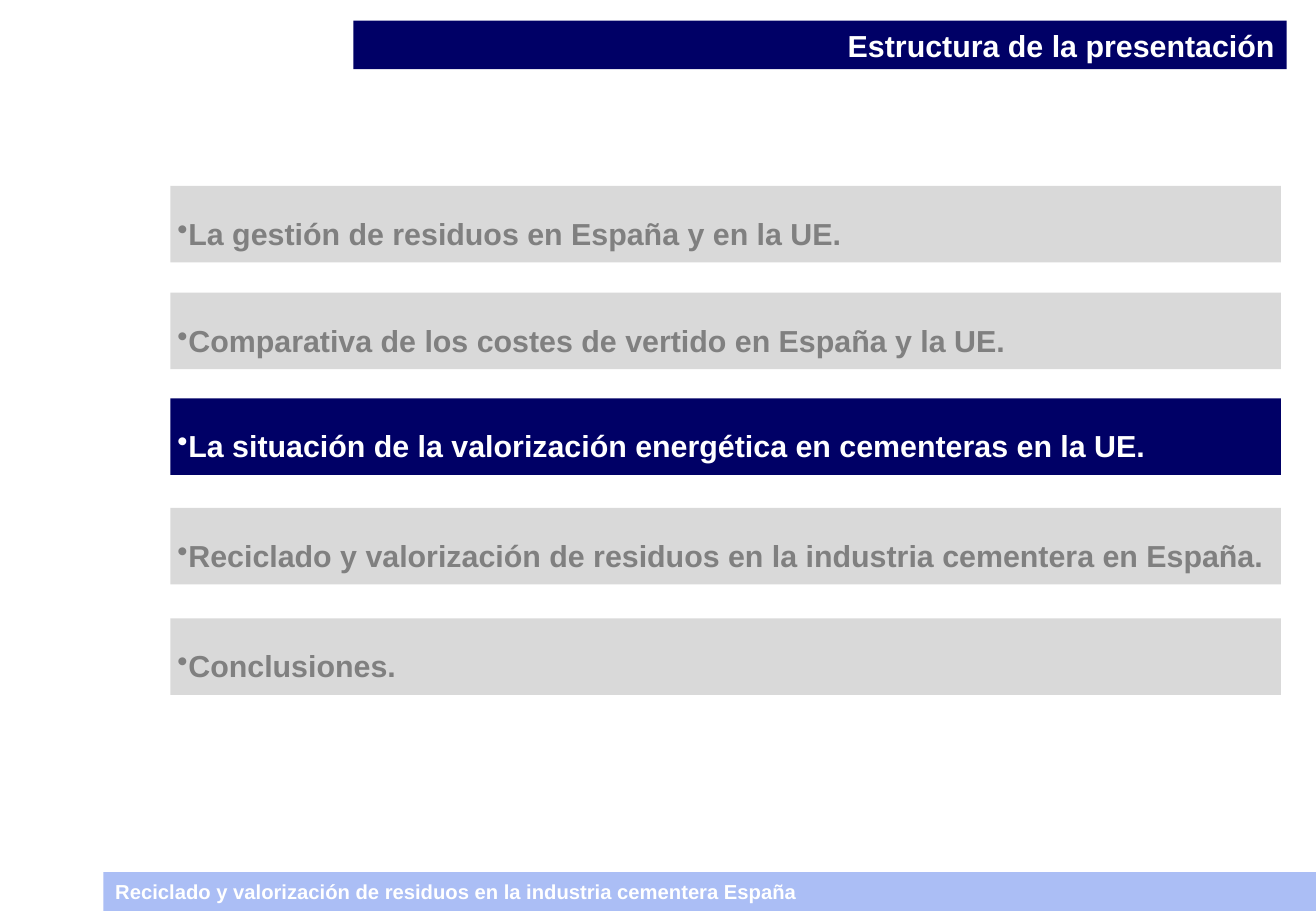
from dataclasses import dataclass

from lxml import etree
from pptx import Presentation
from pptx.dml.color import RGBColor
from pptx.enum.shapes import MSO_SHAPE
from pptx.enum.text import MSO_ANCHOR, PP_ALIGN
from pptx.oxml.ns import qn
from pptx.slide import Slide
from pptx.util import Cm, Pt

RECT = MSO_SHAPE.RECTANGLE
TOP, MIDDLE = MSO_ANCHOR.TOP, MSO_ANCHOR.MIDDLE
LEFT, RIGHT, JUSTIFY = PP_ALIGN.LEFT, PP_ALIGN.RIGHT, PP_ALIGN.JUSTIFY

COLORS = {
    "navy": "000066",
    "sky": "ABBEF5",
    "pale": "D9D9D9",
    "gray": "808080",
    "white": "FFFFFF",
}
FONT = "Arial"
INDENT = Cm(0.23)
ACTIVE = 2
TOPICS = [
    (3.89, "La gestión de residuos en España y en la UE."),
    (6.12, "Comparativa de los costes de vertido en España y la UE."),
    (8.33, "La situación de la valorización energética en cementeras en la UE."),
    (10.62, "Reciclado y valorización de residuos en la industria cementera en España."),
    (12.93, "Conclusiones."),
]


@dataclass
class Bar:
    """A filled band with one line of text; lengths in centimetres."""
    text: str
    left: float
    top: float
    width: float
    height: float
    fill: str
    color: str = "white"
    size: int = 18
    align: PP_ALIGN = LEFT
    anchor: MSO_ANCHOR = MIDDLE
    inset: float = 0.25
    bullet: bool = False


def get_rgb(name: str) -> RGBColor:
    return RGBColor.from_string(COLORS[name])


def add_bullet(para) -> None:
    """Give the paragraph a hanging bullet and wide line spacing."""
    props = para._p.get_or_add_pPr()
    props.set("marL", str(INDENT))
    props.set("indent", str(-INDENT))
    etree.SubElement(props, qn("a:buChar")).set("char", "•")
    para.line_spacing = 1.5


def draw_bar(slide: Slide, bar: Bar) -> None:
    shape = slide.shapes.add_shape(
        RECT, Cm(bar.left), Cm(bar.top), Cm(bar.width), Cm(bar.height))
    shape.shadow.inherit = False
    shape.fill.solid()
    shape.fill.fore_color.rgb = get_rgb(bar.fill)
    shape.line.fill.background()

    frame = shape.text_frame
    frame.word_wrap = True
    frame.vertical_anchor = bar.anchor
    frame.margin_left = frame.margin_right = Cm(bar.inset)
    frame.margin_top = frame.margin_bottom = Cm(0.13)
    frame.text = bar.text

    para = frame.paragraphs[0]
    para.alignment = bar.align
    if bar.bullet:
        add_bullet(para)
    font = para.runs[0].font
    font.name = FONT
    font.size = Pt(bar.size)
    font.bold = True
    font.color.rgb = get_rgb(bar.color)


def main() -> None:
    deck = Presentation()
    deck.slide_width, deck.slide_height = Cm(27.51), Cm(19.05)
    slide = deck.slides.add_slide(deck.slide_layouts[6])

    footer = Bar("Reciclado y valorización de residuos en la industria cementera España",
                 2.16, 18.24, 25.35, 0.81, "sky", size=12)
    title = Bar("Estructura de la presentación",
                7.39, 0.43, 19.51, 1.02, "navy", align=RIGHT, anchor=TOP)
    topics = [
        Bar(text, 3.56, top, 23.22, 1.6,
            fill="navy" if index == ACTIVE else "pale",
            color="white" if index == ACTIVE else "gray",
            align=JUSTIFY, inset=0.15, bullet=True)
        for index, (top, text) in enumerate(TOPICS)
    ]
    for bar in [footer, title, *topics]:
        draw_bar(slide, bar)

    deck.save("out.pptx")


if __name__ == "__main__":
    main()
